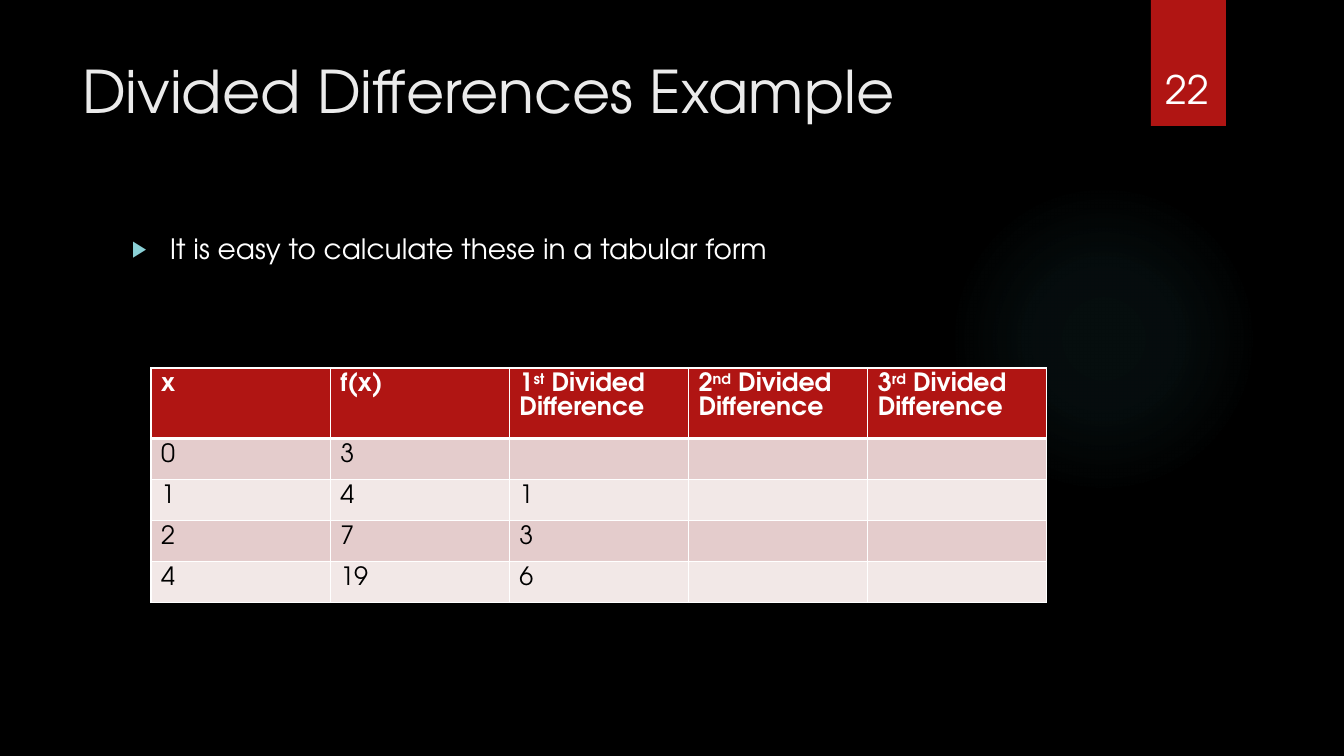
from lxml import etree
from pptx import Presentation
from pptx import util as u
from pptx.dml.color import RGBColor
from pptx.enum import shapes, text
from pptx.oxml import parse_xml
from pptx.oxml.ns import nsdecls, qn

PX = 914400 / 100.8
COLORS = {
    "back": "000000", "white": "FFFFFF", "title": "EBEBEB", "red": "B01513",
    "glow": "50B9C1", "bullet": "8AD0D6", "ink": "000000",
    "band_dark": "E4CCCC", "band_light": "F2E8E7",
}


def px(length):
    return u.Emu(round(length * PX))


def rgb(name):
    return RGBColor.from_string(COLORS[name])


class Page:
    """Holds the slide and its type style."""

    font = "TeX Gyre Adventor"

    def __init__(self, deck):
        self.slide = deck.slides.add_slide(deck.slide_layouts[5])
        self.slide.background.fill.solid()
        self.slide.background.fill.fore_color.rgb = rgb("back")

    def span(self, para, words, size, color, bold=False, raised=False):
        run = para.add_run()
        run.text = words
        run.font.name = self.font
        run.font.size = u.Pt(size)
        run.font.bold = bold
        run.font.color.rgb = rgb(color)
        if raised:
            run.font._element.set("baseline", "30000")

    def shape(self, kind, place, color):
        shape = self.slide.shapes.add_shape(kind, *map(px, place))
        shape.shadow.inherit = False
        shape.fill.solid()
        shape.fill.fore_color.rgb = rgb(color)
        shape.line.fill.background()
        return shape

    def glow(self, place, color, stops):
        """Ellipse that fades out from its centre; stops are (position, opacity)."""
        ellipse = self.shape(shapes.MSO_SHAPE.OVAL, place, color)
        marks = "".join(
            f'<a:gs pos="{position * 1000}"><a:srgbClr val="{COLORS[color]}">'
            f'<a:alpha val="{opacity * 1000}"/></a:srgbClr></a:gs>'
            for position, opacity in stops)
        gradient = parse_xml(
            f'<a:gradFill {nsdecls("a")}><a:gsLst>{marks}</a:gsLst><a:path path="circle">'
            '<a:fillToRect l="50000" t="50000" r="50000" b="50000"/></a:path></a:gradFill>')
        properties = ellipse._element.spPr
        properties.replace(properties.find(qn("a:solidFill")), gradient)

    def title(self, words, place, size):
        box = self.slide.shapes.title
        box.left, box.top, box.width, box.height = map(px, place)
        frame = box.text_frame
        frame.auto_size = text.MSO_AUTO_SIZE.NONE
        frame.vertical_anchor = text.MSO_ANCHOR.TOP
        para = frame.paragraphs[0]
        para.alignment = text.PP_ALIGN.LEFT
        self.span(para, words, size, "title")

    def text(self, words, place, size, align=text.PP_ALIGN.LEFT,
             anchor=text.MSO_ANCHOR.TOP, bullet=False):
        frame = self.slide.shapes.add_textbox(*map(px, place)).text_frame
        frame.word_wrap = True
        frame.vertical_anchor = anchor
        para = frame.paragraphs[0]
        para.alignment = align
        if bullet:
            self.bullet(para)
        self.span(para, words, size, "white")

    def bullet(self, para):
        properties = para._p.get_or_add_pPr()
        properties.set("marL", str(px(38)))
        properties.set("indent", str(-px(38)))
        color = etree.SubElement(properties, qn("a:buClr"))
        etree.SubElement(color, qn("a:srgbClr"), val=COLORS["bullet"])
        etree.SubElement(properties, qn("a:buSzPct"), val="80000")
        etree.SubElement(properties, qn("a:buFont"), typeface="Arial")
        etree.SubElement(properties, qn("a:buChar"), char="▶")

    def borders(self, cell, top, bottom):
        properties = cell._tc.get_or_add_tcPr()
        for side, width in (("L", 1), ("R", 1), ("T", top), ("B", bottom)):
            line = etree.SubElement(properties, qn(f"a:ln{side}"), w=str(u.Pt(width)))
            fill = etree.SubElement(line, qn("a:solidFill"))
            etree.SubElement(fill, qn("a:srgbClr"), val=COLORS["white"])

    def table(self, rows, place, size):
        """Each cell is a tuple of spans; the second span is raised."""
        grid = self.slide.shapes.add_table(len(rows), len(rows[0]), *map(px, place)).table
        for r, row in enumerate(rows):
            header = r == 0
            fill = "red" if header else ("band_light", "band_dark")[r % 2]
            for c, spans in enumerate(row):
                cell = grid.cell(r, c)
                self.borders(cell, 3 if r == 1 else 1, 3 if header else 1)
                cell.fill.solid()
                cell.fill.fore_color.rgb = rgb(fill)
                para = cell.text_frame.paragraphs[0]
                para.font.size = u.Pt(size)
                for i, words in enumerate(spans):
                    self.span(para, words, size, "white" if header else "ink",
                              bold=header, raised=i == 1)


def main():
    deck = Presentation()
    deck.slide_width, deck.slide_height = px(1344), px(756)
    page = Page(deck)

    # Backdrop
    page.glow((949, 184, 310, 310), "glow", [(0, 7), (36, 6), (69, 0)])
    page.shape(shapes.MSO_SHAPE.RECTANGLE, (1151, 0, 75, 126), "red")

    # Title, point and page number
    page.title("Divided Differences Example", (72, 50, 1037, 154), 42)
    page.text("It is easy to calculate these in a tabular form",
              (122, 227, 986, 463), 20, bullet=True)
    page.text("22", (1141, 32, 93, 85), 28, text.PP_ALIGN.CENTER, text.MSO_ANCHOR.BOTTOM)

    # Divided differences table
    orders = [(number, suffix, " Divided Difference")
              for number, suffix in (("1", "st"), ("2", "nd"), ("3", "rd"))]
    points = [("0", "3", ""), ("1", "4", "1"), ("2", "7", "3"), ("4", "19", "6")]
    rows = [[("x",), ("f(x)",), *orders]]
    for point in points:
        rows.append([(value,) if value else () for value in (*point, "", "")])
    page.table(rows, (151, 368, 896, 205), 18)

    deck.save("out.pptx")


if __name__ == "__main__":
    main()
